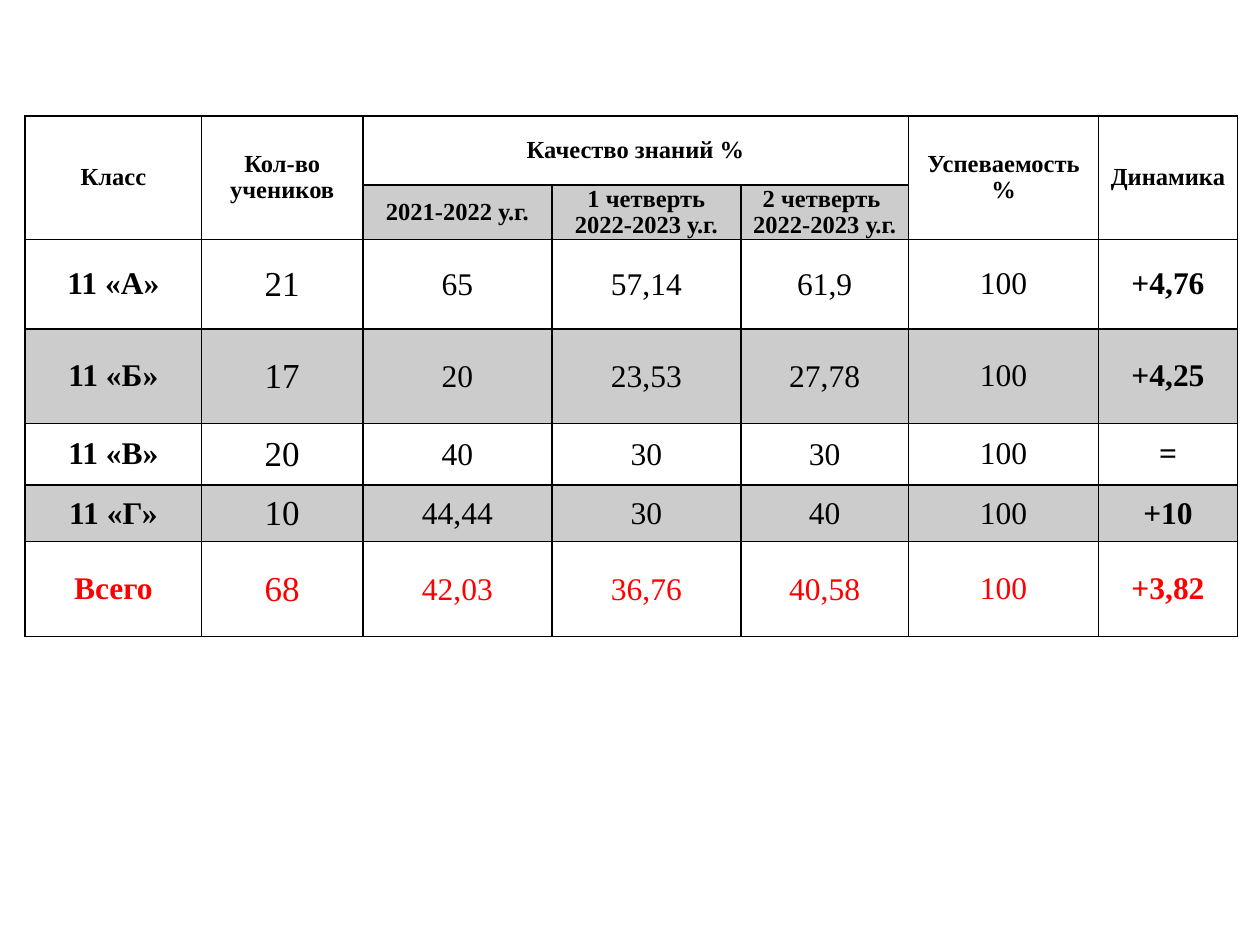
from dataclasses import dataclass

from lxml import etree
from pptx import Presentation
from pptx import util as u
from pptx.dml.color import RGBColor
from pptx.enum import text
from pptx.oxml import ns

COLORS = {"ink": "000000", "total": "FF0000", "band": "000000"}
BAND_OPACITY = 20  # percent
FONT = "Times New Roman"
SLIDE_W, SLIDE_H = 10, 7.5
TABLE_LEFT, TABLE_TOP = 0.2, 0.92
COLUMN_WIDTHS = [1.4, 1.28, 1.5, 1.5, 1.33, 1.51, 1.1]
ROW_HEIGHTS = [0.55, 0.43, 0.71, 0.75, 0.49, 0.45, 0.75]
WIDE_INSETS = (0.07, 0, 0.07, 0)
TIGHT_INSETS = (0.01, 0.01, 0.01, 0)


@dataclass
class Heading:
    label: str
    row: int
    col: int
    rows: int = 1
    cols: int = 1
    banded: bool = False


@dataclass
class ClassResult:
    values: tuple
    banded: bool = False
    color: str = "ink"


HEADINGS = [
    Heading("Класс", 0, 0, rows=2),
    Heading("Кол-во учеников", 0, 1, rows=2),
    Heading("Качество знаний %", 0, 2, cols=3),
    Heading("Успеваемость %", 0, 5, rows=2),
    Heading("Динамика", 0, 6, rows=2),
    Heading("2021-2022 у.г.", 1, 2, banded=True),
    Heading("1 четверть\v2022-2023 у.г.", 1, 3, banded=True),
    Heading("2 четверть \v2022-2023 у.г.", 1, 4, banded=True),
]
RESULTS = [
    ClassResult(("11 «А»", "21", "65", "57,14", "61,9", "100", "+4,76")),
    ClassResult(("11 «Б»", "17", "20", "23,53", "27,78", "100", "+4,25"), banded=True),
    ClassResult(("11 «В»", "20", "40", "30", "30", "100", "=")),
    ClassResult(("11 «Г»", "10", "44,44", "30", "40", "100", "+10"), banded=True),
    ClassResult(("Всего", "68", "42,03", "36,76", "40,58", "100", "+3,82"), color="total"),
]


def style_cell(cell, banded: bool = False) -> None:
    """Give a cell its black borders and its band, if any."""
    if banded:
        cell.fill.solid()
        cell.fill.fore_color.rgb = RGBColor.from_string(COLORS["band"])
    else:
        cell.fill.background()
    props = cell._tc.get_or_add_tcPr()
    for tint in props.iter(ns.qn("a:srgbClr")):
        etree.SubElement(tint, ns.qn("a:alpha"), val=str(BAND_OPACITY * 1000))
    for position, side in enumerate(("lnL", "lnR", "lnT", "lnB")):
        border = etree.Element(ns.qn(f"a:{side}"), w=str(u.Pt(1)))
        fill = etree.SubElement(border, ns.qn("a:solidFill"))
        etree.SubElement(fill, ns.qn("a:srgbClr"), val=COLORS["ink"])
        props.insert(position, border)


def write(cell, content: str, *, size: int, bold: bool = False, color: str = "ink",
          insets: tuple = WIDE_INSETS, spacing: float = 1.0) -> None:
    """Put centred text in a cell."""
    cell.margin_left, cell.margin_top, cell.margin_right, cell.margin_bottom = map(u.Inches, insets)
    cell.vertical_anchor = text.MSO_ANCHOR.MIDDLE
    paragraph = cell.text_frame.paragraphs[0]
    paragraph.text = content
    paragraph.alignment = text.PP_ALIGN.CENTER
    paragraph.line_spacing = spacing
    for run in paragraph.runs:
        run.font.name = FONT
        run.font.size = u.Pt(size)
        run.font.bold = bold
        run.font.color.rgb = RGBColor.from_string(COLORS[color])


def add_grid(slide):
    """Add the bare table with its column widths and row heights."""
    grid = slide.shapes.add_table(
        len(ROW_HEIGHTS), len(COLUMN_WIDTHS), u.Inches(TABLE_LEFT), u.Inches(TABLE_TOP),
        u.Inches(sum(COLUMN_WIDTHS)), u.Inches(sum(ROW_HEIGHTS))).table
    grid.first_row = grid.horz_banding = False
    for column, width in zip(grid.columns, COLUMN_WIDTHS):
        column.width = u.Inches(width)
    for row, height in zip(grid.rows, ROW_HEIGHTS):
        row.height = u.Inches(height)
    return grid


def draw_heading(grid, heading: Heading) -> None:
    cell = grid.cell(heading.row, heading.col)
    last_row = heading.row + heading.rows - 1
    last_col = heading.col + heading.cols - 1
    for row in range(heading.row, last_row + 1):
        for col in range(heading.col, last_col + 1):
            style_cell(grid.cell(row, col), heading.banded)
            write(grid.cell(row, col), "", size=14)
    if heading.rows * heading.cols > 1:
        cell.merge(grid.cell(last_row, last_col))
    write(cell, heading.label, size=14, bold=True, spacing=0.96)


def draw_result(grid, row: int, result: ClassResult) -> None:
    for col, value in enumerate(result.values):
        cell = grid.cell(row, col)
        style_cell(cell, result.banded)
        write(cell, value, size=20 if col == 1 else 18, bold=col in (0, 6),
              color=result.color, insets=TIGHT_INSETS if 1 <= col <= 4 else WIDE_INSETS)


def main() -> None:
    deck = Presentation()
    deck.slide_width, deck.slide_height = u.Inches(SLIDE_W), u.Inches(SLIDE_H)
    slide = deck.slides.add_slide(deck.slide_layouts[6])
    grid = add_grid(slide)
    # Two heading rows
    for heading in HEADINGS:
        draw_heading(grid, heading)
    # One row for each class, then the total
    for row, result in enumerate(RESULTS, start=2):
        draw_result(grid, row, result)
    deck.save("out.pptx")


if __name__ == "__main__":
    main()
